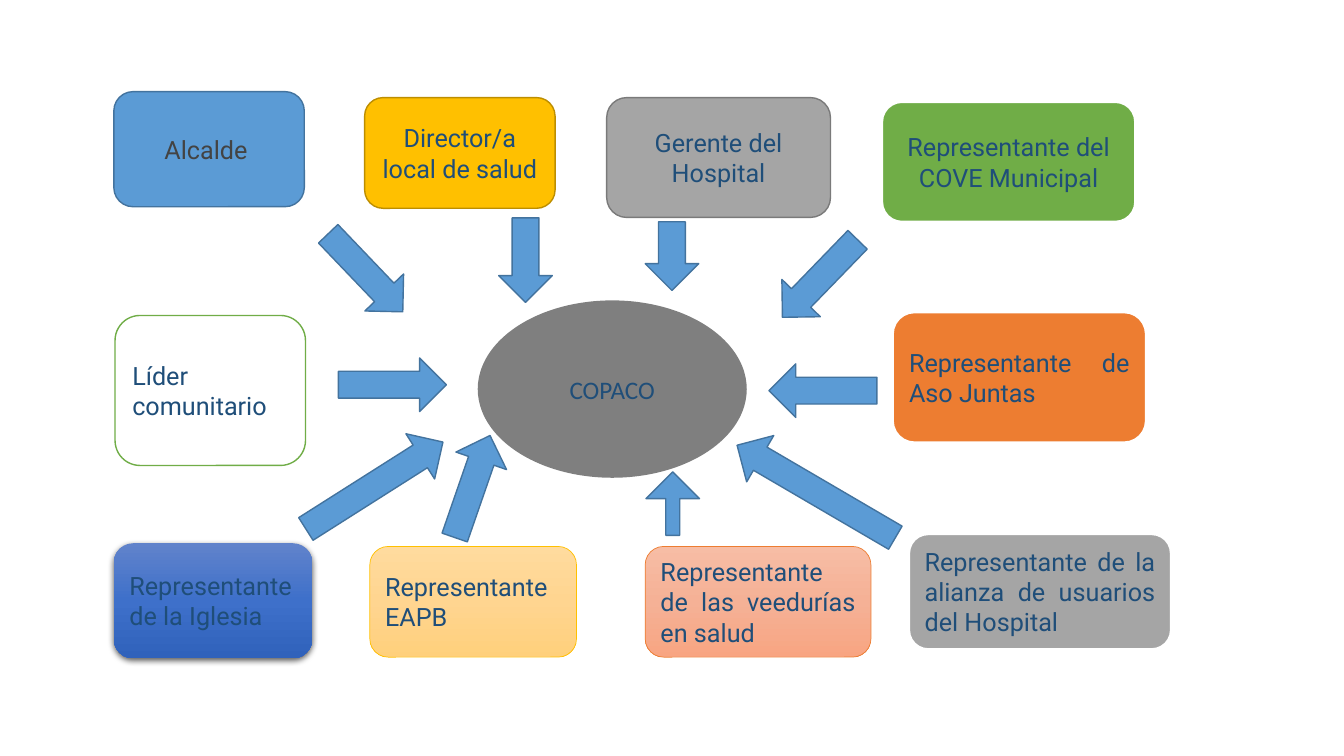
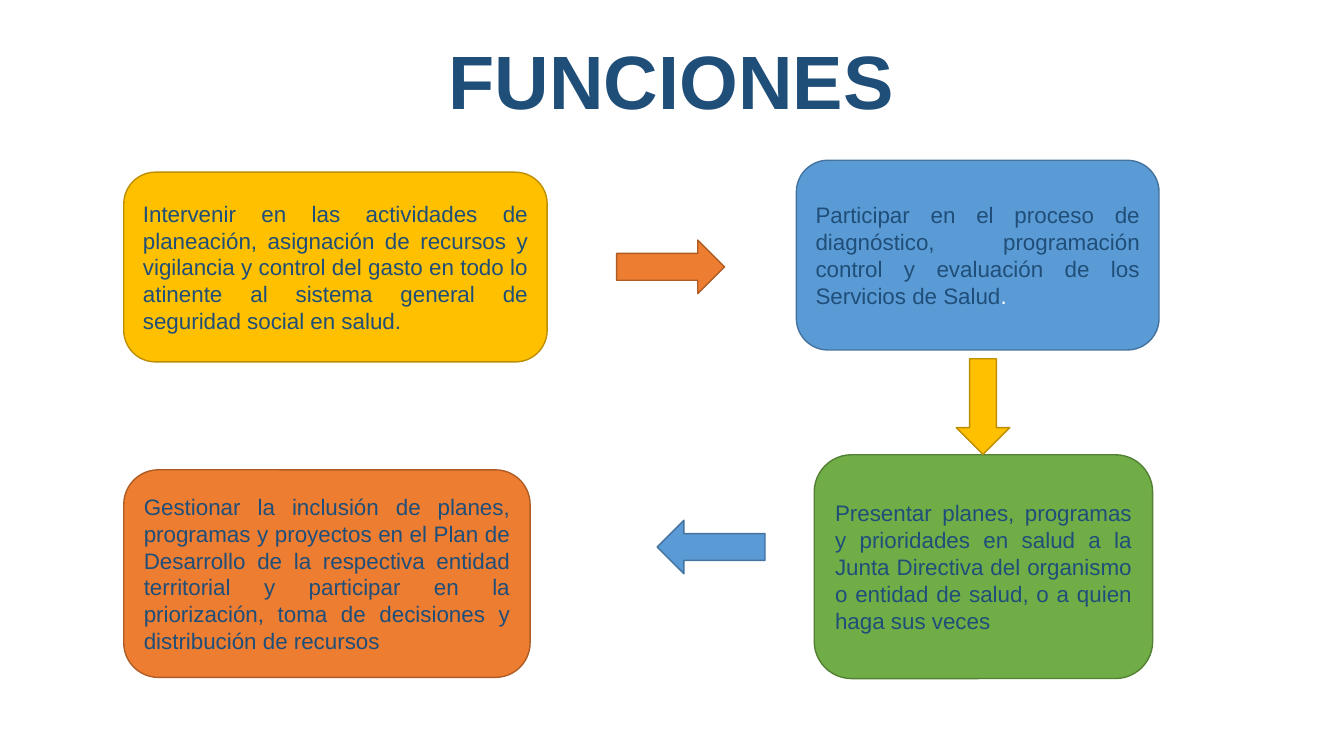
from copy import deepcopy

from lxml.etree import SubElement
from pptx import Presentation
from pptx.dml.color import RGBColor
from pptx.enum.shapes import MSO_SHAPE as Preset
from pptx.enum.text import MSO_ANCHOR as Anchor, PP_ALIGN as Align
from pptx.oxml.ns import qn
from pptx.util import Cm, Pt

BLUE, GOLD, GREY, GREEN, ORANGE = "5B9BD5", "FFC000", "A5A5A5", "70AD47", "ED7D31"
WHITE, BLACK, NAVY, CHARCOAL = "FFFFFF", "000000", "1F4E79", "434343"
EDGES = {BLUE: "43739E", GOLD: "BD8E00", GREY: "7A7A7A", GREEN: "538035", ORANGE: "AF5C24"}
PEACH_FADE = ("F7BDA5", "F5B196", "F8A582")
GOLD_FADE = ("FFDB9E", "FFD590", "FFD07C")
BLUE_FADE = ("6183CB", "3E70CA", "3062BB")
ARROW_WIDTH = 1.35

MEMBERS = [
    ("Alcalde ", (2.87, 2.31, 4.8, 2.9), BLUE, EDGES[BLUE], 1, Align.CENTER, CHARCOAL),
    ("Director/a local de salud", (9.19, 2.46, 4.8, 2.79), GOLD, EDGES[GOLD], 1, Align.CENTER, NAVY),
    ("Gerente del Hospital", (15.29, 2.46, 5.64, 3.02), GREY, EDGES[GREY], 1, Align.CENTER, NAVY),
    ("Representante del COVE Municipal", (22.23, 2.57, 6.38, 3.02), GREEN, WHITE, 1.5, Align.CENTER, NAVY),
    ("Representante de Aso Juntas", (22.5, 7.87, 6.38, 3.28), ORANGE, WHITE, 1.5, Align.JUSTIFY, NAVY),
    ("Representante de la alianza de usuarios del Hospital",
     (22.91, 13.46, 6.6, 2.9), GREY, WHITE, 1.5, Align.JUSTIFY, NAVY),
    ("Representante de las veedurías en salud",
     (16.26, 13.77, 5.69, 2.79), PEACH_FADE, ORANGE, 0.5, Align.JUSTIFY, NAVY),
    ("Representante EAPB", (9.32, 13.77, 5.21, 2.79), GOLD_FADE, GOLD, 0.5, Align.JUSTIFY, NAVY),
    ("Líder comunitario", (2.9, 7.95, 4.8, 3.78), WHITE, GREEN, 1, Align.JUSTIFY, NAVY),
]

MEMBER_ARROWS = [
    (Preset.RIGHT_ARROW, 7.85, 6.2, 2.72, 46.3),
    (Preset.DOWN_ARROW, 12.57, 5.49, 2.13, 0),
    (Preset.DOWN_ARROW, 16.26, 5.59, 1.73, 0),
    (Preset.DOWN_ARROW, 19.99, 5.66, 2.72, 44.1),
    (Preset.LEFT_ARROW, 19.38, 9.17, 2.72, 0),
    (Preset.LEFT_ARROW, 18.26, 11.71, 4.62, 30.3),
    (Preset.UP_ARROW, 11.23, 10.9, 2.72, 19.1),
    (Preset.UP_ARROW, 8.76, 10.19, 4.09, 57.6),
    (Preset.RIGHT_ARROW, 8.53, 9.02, 2.72, 0),
]

DUTIES = [
    ("Intervenir en las actividades de planeación, asignación de recursos y vigilancia y control "
     "del gasto en todo lo atinente al sistema general de seguridad social en salud.",
     (3.12, 4.34, 10.67, 4.78), GOLD),
    ("Participar en el proceso de diagnóstico, programación control y evaluación de los "
     "Servicios de Salud", (20.07, 4.04, 9.14, 4.78), BLUE),
    ("Presentar planes, programas y prioridades en salud a la Junta Directiva del organismo "
     "o entidad de salud, o a quien haga sus veces", (20.52, 11.46, 8.53, 5.64), GREEN),
    ("Gestionar la inclusión de planes, programas y proyectos en el Plan de Desarrollo de la "
     "respectiva entidad territorial y participar en la priorización, toma de decisiones y "
     "distribución de recursos", (3.12, 11.84, 10.24, 5.23), ORANGE),
]

DUTY_ARROWS = [
    (Preset.RIGHT_ARROW, 15.54, 6.05, 2.72, ORANGE),
    (Preset.DOWN_ARROW, 24.1, 9.04, 2.41, GOLD),
    (Preset.LEFT_ARROW, 16.56, 13.11, 2.72, BLUE),
]


def rgb(colour):
    return RGBColor.from_string(colour)


def paint_fade(shape, colours):
    fill = shape.fill
    fill.gradient()
    fill.gradient_angle = 270
    stop_list = shape._element.spPr.find(".//" + qn("a:gsLst"))
    stop_list.insert(1, deepcopy(stop_list[0]))
    for index, (stop, colour) in enumerate(zip(fill.gradient_stops, colours)):
        stop.position = index / 2
        stop.color.rgb = rgb(colour)


def add_figure(page, preset, place, fill, edge=None, weight=1):
    shape = page.shapes.add_shape(preset, *map(Cm, place))
    shape.shadow.inherit = False
    if isinstance(fill, tuple):
        paint_fade(shape, fill)
    else:
        shape.fill.solid()
        shape.fill.fore_color.rgb = rgb(fill)
    if edge:
        shape.line.color.rgb = rgb(edge)
        shape.line.width = Pt(weight)
    else:
        shape.line.fill.background()
    return shape


def write(shape, text, font, size, align, colour=NAVY, anchor=Anchor.MIDDLE):
    frame = shape.text_frame
    frame.word_wrap = True
    frame.vertical_anchor = anchor
    para = frame.paragraphs[0]
    para.alignment = align
    para.font.name = font
    para.font.size = Pt(size)
    para.font.color.rgb = rgb(colour)
    para.add_run().text = text
    return para


def add_arrow(page, preset, left, top, length, turn=0, fill=BLUE):
    upright = preset in (Preset.UP_ARROW, Preset.DOWN_ARROW)
    size = (ARROW_WIDTH, length) if upright else (length, ARROW_WIDTH)
    arrow = add_figure(page, preset, (left, top, *size), fill, EDGES[fill])
    arrow.rotation = turn
    return arrow


def make_see_through(shape, percent):
    colour = shape._element.spPr.find(qn("a:solidFill"))[0]
    SubElement(colour, qn("a:alpha"), val=str(percent * 1000))


def cast_shadow(shape):
    effects = shape._element.spPr.find(qn("a:effectLst"))
    shadow = SubElement(effects, qn("a:outerShdw"), blurRad=str(Pt(4.5)), dist=str(Pt(1.5)),
                        dir="5400000", algn="ctr", rotWithShape="0")
    colour = SubElement(shadow, qn("a:srgbClr"), val=BLACK)
    SubElement(colour, qn("a:alpha"), val="63000")


def build_members(page):
    for text, place, fill, edge, weight, align, colour in MEMBERS:
        box = add_figure(page, Preset.ROUNDED_RECTANGLE, place, fill, edge, weight)
        write(box, text, "Roboto", 18, align, colour)
    church = add_figure(page, Preset.ROUNDED_RECTANGLE, (2.87, 13.69, 5, 2.9), BLUE_FADE)
    cast_shadow(church)
    write(church, "Representante de la Iglesia", "Roboto", 18, Align.JUSTIFY)
    committee = add_figure(page, Preset.OVAL, (12.04, 7.57, 6.78, 4.47), BLACK)
    make_see_through(committee, 50)
    write(committee, "COPACO", "Calibri", 18, Align.CENTER)
    for arrow in MEMBER_ARROWS:
        add_arrow(page, *arrow)
    thin_arrow = add_arrow(page, Preset.UP_ARROW, 16.28, 11.89, 1.6)
    thin_arrow.adjustments[0] = 0.26


def build_duties(page):
    title = page.shapes.add_textbox(Cm(2.31), Cm(0.8), Cm(29.21), Cm(2.5))
    heading = write(title, "FUNCIONES", "Arial", 54, Align.CENTER, anchor=Anchor.BOTTOM)
    heading.font.bold = True
    heading.line_spacing = 0.9
    for text, place, fill in DUTIES:
        box = add_figure(page, Preset.ROUNDED_RECTANGLE, place, fill, EDGES[fill])
        para = write(box, text, "Arial", 16, Align.JUSTIFY)
        if fill == BLUE:
            span = para.add_run()
            span.text = "."
            span.font.color.rgb = rgb(WHITE)
    for preset, left, top, length, fill in DUTY_ARROWS:
        add_arrow(page, preset, left, top, length, fill=fill)


def main():
    deck = Presentation()
    deck.slide_width, deck.slide_height = Cm(33.87), Cm(19.05)
    for build in (build_members, build_duties):
        build(deck.slides.add_slide(deck.slide_layouts[6]))
    deck.save("out.pptx")


if __name__ == "__main__":
    main()
